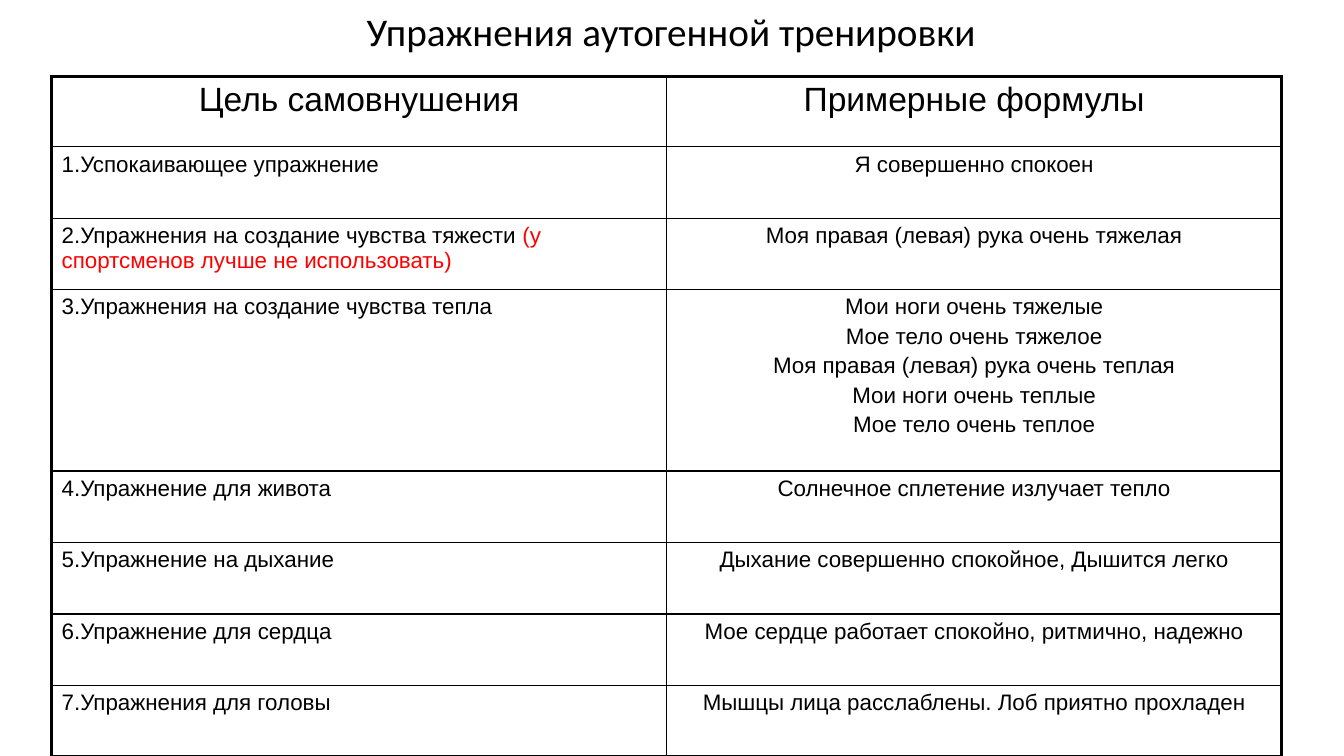
from lxml.etree import SubElement
from pptx import Presentation
from pptx.dml.color import RGBColor
from pptx.enum.text import MSO_ANCHOR, PP_ALIGN
from pptx.oxml.ns import qn
from pptx.util import Cm, Pt

COLORS = {"text": "000000", "warning": "FF0000", "border": "000000", "cell": "FFFFFF"}
THIN, THICK = Pt(1), Pt(2.25)
HEADER_HEIGHT, ROW_HEIGHT, TALL_ROW_HEIGHT = 1.78, 1.8, 4.57
COLUMN_WIDTH = 15.5

HEADERS = ("Цель самовнушения", "Примерные формулы")
EXERCISES = [
    ("1.Успокаивающее упражнение", ["Я совершенно спокоен"]),
    ("2.Упражнения на создание чувства тяжести", ["Моя правая (левая) рука очень тяжелая"]),
    ("3.Упражнения на создание чувства тепла", [
        "Мои ноги очень тяжелые",
        "Мое тело очень тяжелое",
        "Моя правая (левая) рука очень теплая",
        "Мои ноги очень теплые",
        "Мое тело очень теплое",
    ]),
    ("4.Упражнение для живота", ["Солнечное сплетение излучает тепло"]),
    ("5.Упражнение на дыхание", ["Дыхание совершенно спокойное, Дышится легко"]),
    ("6.Упражнение для сердца", ["Мое сердце работает спокойно, ритмично, надежно"]),
    ("7.Упражнения для головы", ["Мышцы лица расслаблены. Лоб приятно прохладен"]),
]
WARNING = " (у спортсменов лучше не использовать)"
WARNING_ROW = 2


def add_text(p, text, size=16, font="Arial", color="text", align=PP_ALIGN.LEFT):
    p.alignment = align
    r = p.add_run()
    r.text = text
    r.font.size = Pt(size)
    r.font.name = font
    r.font.color.rgb = RGBColor.from_string(COLORS[color])


def set_borders(cell, **widths):
    """Draw solid cell borders; widths must come in the order L, R, T, B."""
    tc_pr = cell._tc.get_or_add_tcPr()
    for i, (side, width) in enumerate(widths.items()):
        ln = SubElement(tc_pr, qn(f"a:ln{side}"), w=str(width))
        fill = SubElement(ln, qn("a:solidFill"))
        SubElement(fill, qn("a:srgbClr"), val=COLORS["border"])
        tc_pr.insert(i, ln)


prs = Presentation()
prs.slide_width, prs.slide_height = Cm(33.87), Cm(19.05)
s = prs.slides.add_slide(prs.slide_layouts[6])

title = s.shapes.add_textbox(Cm(6.12), Cm(0.71), Cm(21.59), Cm(0.81))
tf = title.text_frame
tf.word_wrap = True
tf.vertical_anchor = MSO_ANCHOR.BOTTOM
tf.paragraphs[0].line_spacing = 0.9
add_text(tf.paragraphs[0], "Упражнения аутогенной тренировки",
         size=28, font="Calibri", align=PP_ALIGN.CENTER)

heights = [HEADER_HEIGHT] + [
    TALL_ROW_HEIGHT if len(formulas) > 1 else ROW_HEIGHT for _, formulas in EXERCISES
]
table = s.shapes.add_table(len(heights), 2, Cm(1.3), Cm(1.92),
                           Cm(2 * COLUMN_WIDTH), Cm(sum(heights))).table
table.first_row = table.horz_banding = False
for column in table.columns:
    column.width = Cm(COLUMN_WIDTH)
for row, height in zip(table.rows, heights):
    row.height = Cm(height)

for c, header in enumerate(HEADERS):
    add_text(table.cell(0, c).text_frame.paragraphs[0], header,
             size=24, align=PP_ALIGN.CENTER)

for n, (goal, formulas) in enumerate(EXERCISES, start=1):
    p = table.cell(n, 0).text_frame.paragraphs[0]
    add_text(p, goal)
    if n == WARNING_ROW:
        add_text(p, WARNING, color="warning")
    tf = table.cell(n, 1).text_frame
    for i, formula in enumerate(formulas):
        p = tf.add_paragraph() if i else tf.paragraphs[0]
        p.space_before = Pt(3.2 if i else 0)
        add_text(p, formula, align=PP_ALIGN.CENTER)

last_row = len(heights) - 1
for n in range(len(heights)):
    for c in range(2):
        cell = table.cell(n, c)
        cell.fill.solid()
        cell.fill.fore_color.rgb = RGBColor.from_string(COLORS["cell"])
        set_borders(cell,
                    L=THICK if c == 0 else THIN,
                    R=THICK if c == 1 else THIN,
                    T=THICK if n == 0 else THIN,
                    B=THICK if n == last_row else THIN)

prs.save("out.pptx")
